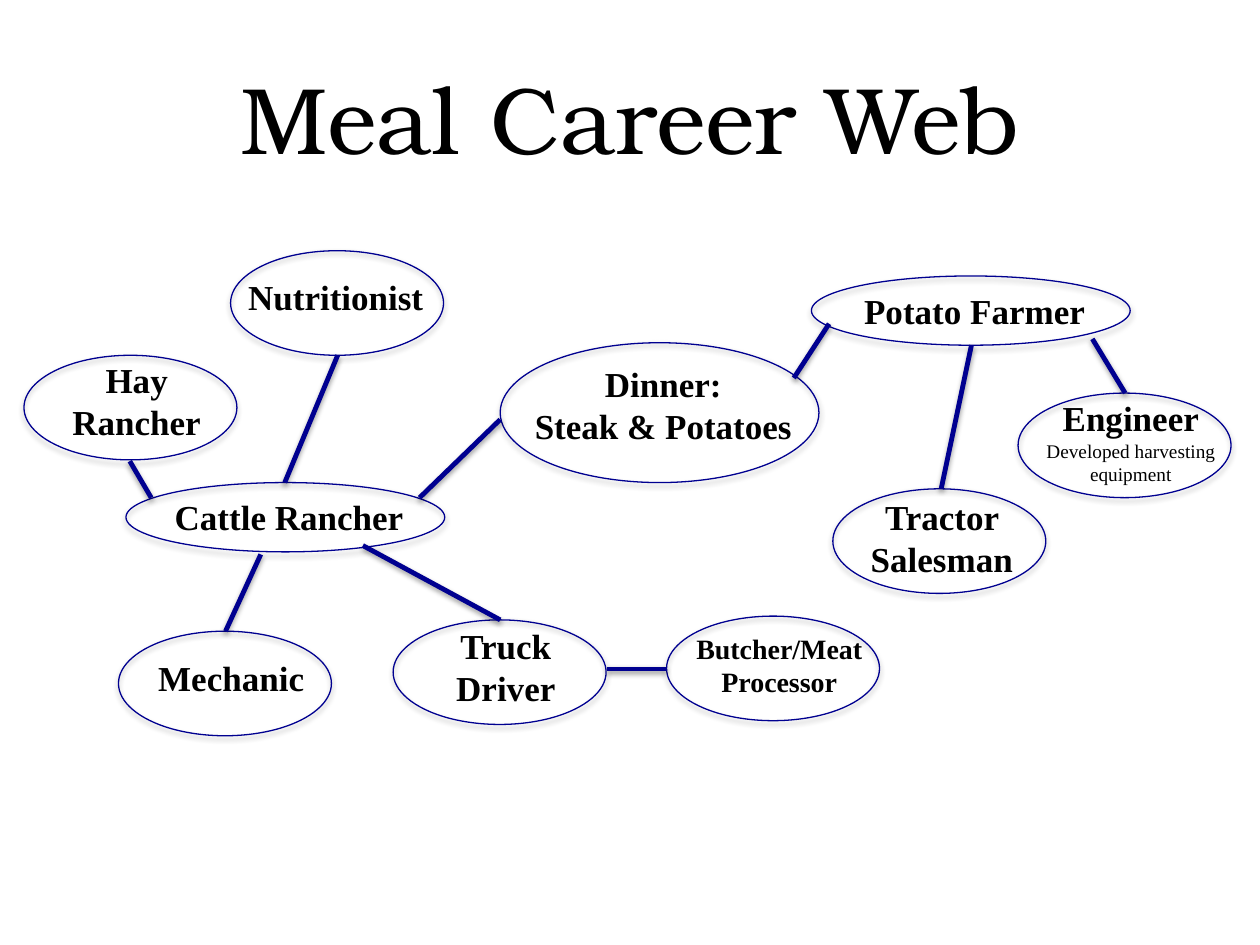
from lxml import etree
from pptx import Presentation
from pptx.dml.color import RGBColor
from pptx.enum import shapes, text
from pptx.oxml import ns
from pptx.util import Inches, Pt

NAVY = "000090"
BLACK = "000000"
LARGE, SMALL = (2.53, 0.55), (1.69, 0.83)

# Ellipse left and top, ellipse size, label left, top, width and height, label lines with size and weight
CAREERS = [
    ((3.97, 2.72), (2.53, 1.11), (4, 2.83, 2.53, 0.77),
     [("Dinner:", 20, True), ("Steak & Potatoes", 20, True)]),
    ((6.44, 2.19), LARGE, (6.47, 2.25, 2.53, 0.44), [("Potato Farmer", 20, True)]),
    ((1, 3.83), LARGE, (1.03, 3.88, 2.53, 0.44), [("Cattle Rancher", 20, True)]),
    ((6.61, 3.88), SMALL, (6.64, 3.88, 1.67, 0.77), [("Tractor Salesman", 20, True)]),
    ((8.08, 3.12), SMALL, (8.14, 3.1, 1.67, 0.81),
     [("Engineer", 20, True), ("Developed harvesting equipment", 11, False)]),
    ((1.83, 1.99), SMALL, (1.83, 2.14, 1.67, 0.44), [("Nutritionist", 20, True)]),
    ((0.19, 2.82), SMALL, (0.25, 2.8, 1.67, 0.77), [("Hay Rancher", 20, True)]),
    ((3.12, 4.92), SMALL, (3.18, 4.91, 1.67, 0.77), [("Truck Driver", 20, True)]),
    ((0.94, 5.01), SMALL, (1, 5.16, 1.67, 0.44), [("Mechanic", 20, True)]),
    ((5.29, 4.89), SMALL, (5.35, 4.96, 1.67, 0.64), [("Butcher/Meat Processor", 16, True)]),
]

LINKS = [
    ((6.3, 3), (6.58, 2.57)),
    ((8.93, 3.12), (8.67, 2.69)),
    ((7.47, 3.88), (7.71, 2.74)),
    ((2.68, 2.82), (2.26, 3.83)),
    ((3.33, 3.95), (3.97, 3.33)),
    ((3.97, 4.92), (2.88, 4.33)),
    ((1.79, 5.01), (2.07, 4.4)),
    ((1.03, 3.66), (1.2, 3.95)),
    ((4.82, 5.31), (5.29, 5.31)),
]


def color(value):
    return RGBColor.from_string(value)


def write(paragraph, content, size=20, bold=False, font="Times New Roman"):
    paragraph.alignment = text.PP_ALIGN.CENTER
    run = paragraph.add_run()
    run.text = content
    run.font.name = font
    run.font.size = Pt(size)
    run.font.bold = bold
    run.font.color.rgb = color(BLACK)


def draw_outline(shape, width, shadow_opacity, shadow_distance):
    """Give a shape a navy line and a soft shadow straight below it."""
    shape.line.color.rgb = color(NAVY)
    shape.line.width = Pt(width)
    effects = etree.SubElement(shape._element.spPr, ns.qn("a:effectLst"))
    shadow = etree.SubElement(effects, ns.qn("a:outerShdw"), blurRad=str(Pt(3.1)),
                              dist=str(Pt(shadow_distance)), dir="5400000", rotWithShape="0")
    shade = etree.SubElement(shadow, ns.qn("a:srgbClr"), val=BLACK)
    etree.SubElement(shade, ns.qn("a:alpha"), val=str(shadow_opacity * 1000))


def add_title(slide, content):
    title = slide.shapes.title
    title.left, title.top, title.width, title.height = map(Inches, (0.5, 0.3, 9, 1.25))
    title.text_frame.vertical_anchor = text.MSO_ANCHOR.MIDDLE
    write(title.text_frame.paragraphs[0], content, size=54, font="TeX Gyre Bonum")


def add_ellipse(slide, position, size):
    ellipse = slide.shapes.add_shape(shapes.MSO_SHAPE.OVAL, *map(Inches, position + size))
    ellipse.fill.background()
    draw_outline(ellipse, 0.75, 35, 1.8)


def add_label(slide, box, lines):
    frame = slide.shapes.add_textbox(*map(Inches, box)).text_frame
    frame.word_wrap = True
    frame.auto_size = text.MSO_AUTO_SIZE.SHAPE_TO_FIT_TEXT
    for index, (content, size, bold) in enumerate(lines):
        paragraph = frame.add_paragraph() if index else frame.paragraphs[0]
        write(paragraph, content, size=size, bold=bold)


def add_link(slide, start, end):
    link = slide.shapes.add_connector(shapes.MSO_CONNECTOR.STRAIGHT, *map(Inches, start + end))
    draw_outline(link, 2.75, 38, 1.6)


def main():
    presentation = Presentation()
    presentation.slide_width, presentation.slide_height = Inches(10), Inches(7.5)
    slide = presentation.slides.add_slide(presentation.slide_layouts[5])
    add_title(slide, "Meal Career Web")
    for position, size, label_box, lines in CAREERS:
        add_ellipse(slide, position, size)
        add_label(slide, label_box, lines)
    for start, end in LINKS:
        add_link(slide, start, end)
    presentation.save("out.pptx")


if __name__ == "__main__":
    main()
